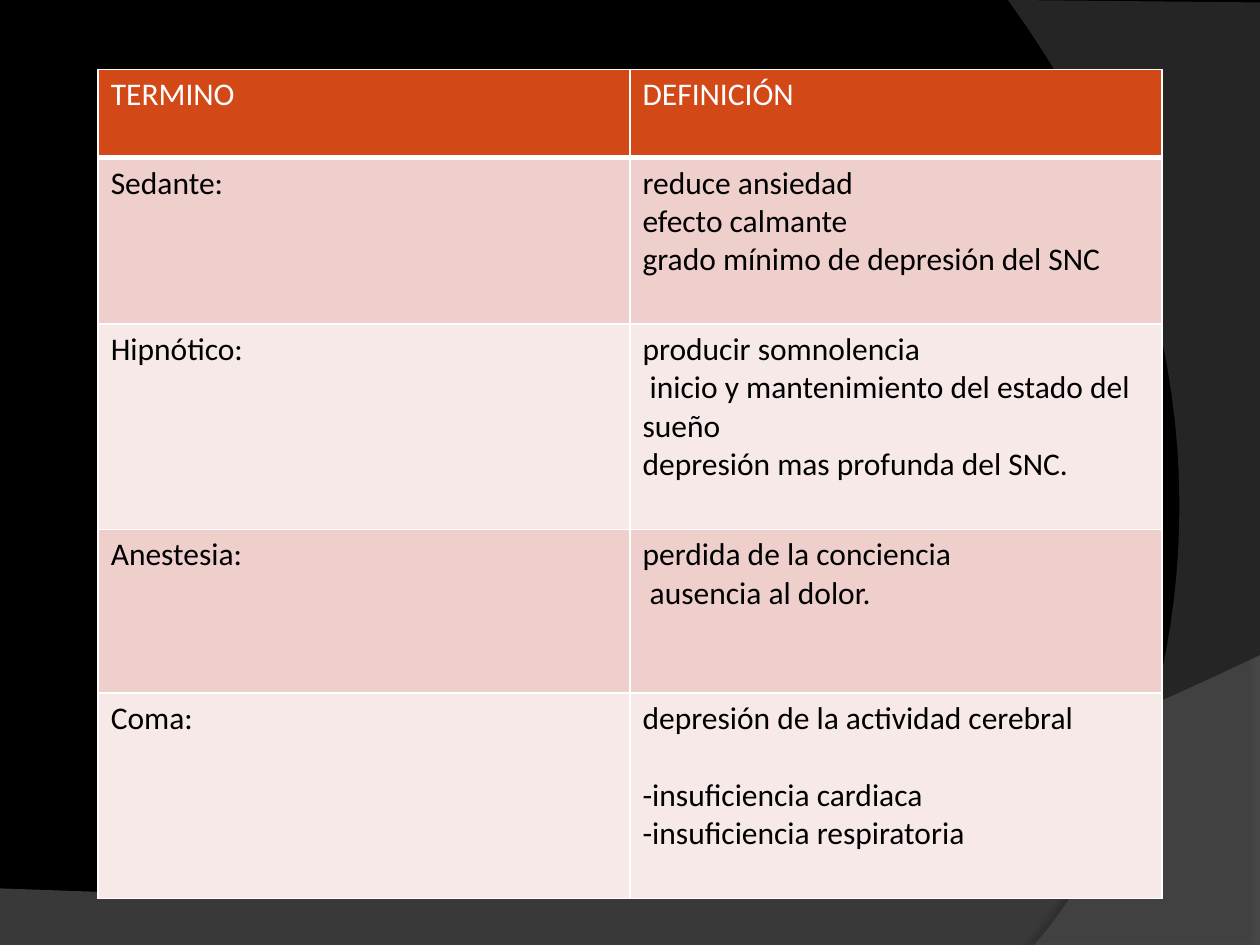
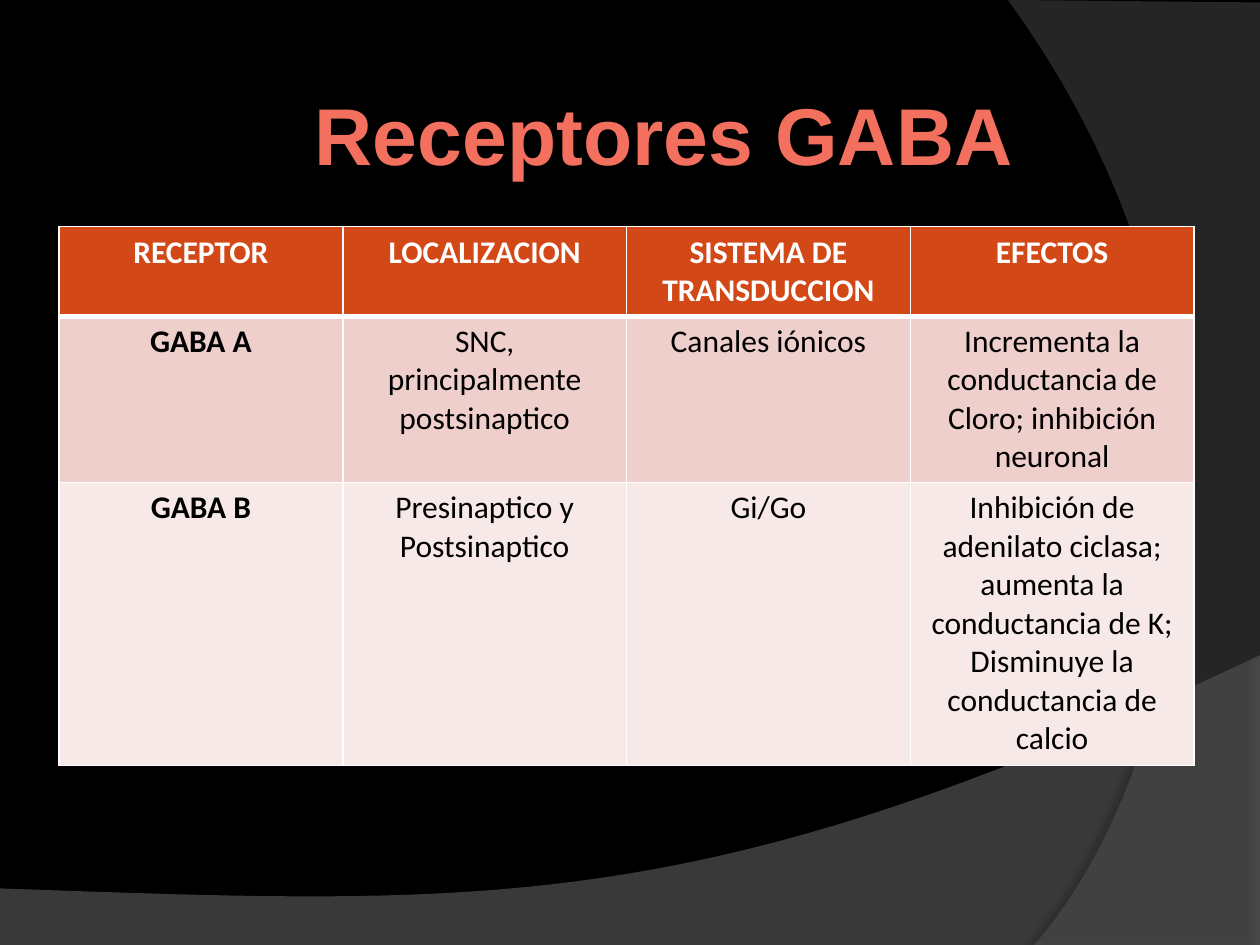
from lxml import etree
from pptx import Presentation
from pptx.dml.color import RGBColor
from pptx.enum.text import MSO_ANCHOR, MSO_AUTO_SIZE, PP_ALIGN
from pptx.oxml.ns import qn
from pptx.util import Cm, Pt

LEFT, CENTER = PP_ALIGN.LEFT, PP_ALIGN.CENTER
MIDDLE = MSO_ANCHOR.MIDDLE
NO_AUTOFIT = MSO_AUTO_SIZE.NONE
TITLE_ONLY, BLANK = 5, 6
COLORS = {
    "background": "000000",
    "band": "7F7F7F",
    "side": "5E5E5E",
    "title": "F4705E",
    "header": "D34817",
    "odd_row": "EFCFCC",
    "even_row": "F7E9E8",
    "border": "FFFFFF",
    "header_text": "FFFFFF",
    "body_text": "000000",
    "shadow": "000000",
}
TERMS = [
    ["TERMINO", "DEFINICIÓN"],
    ["Sedante:", "reduce ansiedad\nefecto calmante\ngrado mínimo de depresión del SNC"],
    ["Hipnótico:", "producir somnolencia\n inicio y mantenimiento del estado del sueño\n"
                   "depresión mas profunda del SNC."],
    ["Anestesia:", "perdida de la conciencia\n ausencia al dolor."],
    ["Coma:", "depresión de la actividad cerebral\n-insuficiencia cardiaca\n"
              "-insuficiencia respiratoria"],
]
RECEPTORS = [
    ["RECEPTOR", "LOCALIZACION", "SISTEMA DE TRANSDUCCION", "EFECTOS"],
    ["GABA A", "SNC, principalmente postsinaptico", "Canales iónicos",
     "Incrementa la conductancia de Cloro; inhibición neuronal"],
    ["GABA B", "Presinaptico y Postsinaptico", "Gi/Go",
     "Inhibición de adenilato ciclasa; aumenta la conductancia de K;\n"
     "Disminuye la conductancia de calcio"],
]


def curve(start, first, second, end, steps=40):
    """Return the points of a cubic Bézier curve."""
    points = []
    for step in range(steps + 1):
        t = step / steps
        weights = ((1 - t) ** 3, 3 * t * (1 - t) ** 2, 3 * t ** 2 * (1 - t), t ** 3)
        points.append(tuple(
            sum(weight * value for weight, value in zip(weights, values))
            for values in zip(start, first, second, end)))
    return points


class Deck:
    """Hold the shared style and the slide being built."""

    def __init__(self):
        self.presentation = Presentation()
        self.presentation.slide_width = Cm(25.4)
        self.presentation.slide_height = Cm(19.05)
        self.slide = None

    def color(self, name):
        return RGBColor.from_string(COLORS[name])

    def new_slide(self, layout):
        self.slide = self.presentation.slides.add_slide(
            self.presentation.slide_layouts[layout])
        fill = self.slide.background.fill
        fill.solid()
        fill.fore_color.rgb = self.color("background")
        band = curve((25.4, 13.21), (14.2, 18.52), (9.93, 18.26), (0, 17.91))
        self.backdrop([(0, 19.05), (25.4, 19.05)] + band, "band", 45, 35, 3.5, 270)
        side = curve((20.85, 19.05), (23.75, 15.72), (25.86, 7.62), (20.32, 0))
        self.backdrop([(25.4, 0.05), (25.4, 19.05)] + side, "side", 40, 45, 4, 180)

    def backdrop(self, points, color, opacity, shadow_opacity, distance, direction):
        vertices = [(Cm(x), Cm(y)) for x, y in points]
        builder = self.slide.shapes.build_freeform(*vertices[0])
        builder.add_line_segments(vertices[1:], close=True)
        shape = builder.convert_to_shape()
        shape.fill.solid()
        shape.fill.fore_color.rgb = self.color(color)
        shape.line.fill.background()
        shape.shadow.inherit = False
        properties = shape._element.spPr
        fill_color = properties.find(qn("a:solidFill"))[0]
        etree.SubElement(fill_color, qn("a:alpha"), val=str(opacity * 1000))
        shadow = etree.SubElement(
            properties.find(qn("a:effectLst")), qn("a:outerShdw"), blurRad=str(Pt(4)),
            dist=str(Pt(distance)), dir=str(direction * 60000), rotWithShape="0")
        shadow_color = etree.SubElement(shadow, qn("a:srgbClr"), val=COLORS["shadow"])
        etree.SubElement(shadow_color, qn("a:alpha"), val=str(shadow_opacity * 1000))

    def title(self, text):
        shape = self.slide.shapes.title
        self.slide.shapes._spTree.append(shape._element)
        shape.left, shape.top = Cm(1.27), Cm(0.74)
        shape.width, shape.height = Cm(22.86), Cm(3.89)
        frame = shape.text_frame
        frame.text = text
        frame.word_wrap = True
        frame.auto_size = NO_AUTOFIT
        frame.vertical_anchor = MIDDLE
        frame.margin_left = frame.margin_right = Cm(0.13)
        frame.margin_top = frame.margin_bottom = Cm(0.13)
        paragraph = frame.paragraphs[0]
        paragraph._p.get_or_add_pPr().set("marL", str(Cm(1.35)))
        paragraph._p.get_or_add_pPr().set("indent", "0")
        paragraph.alignment = CENTER
        self.format_font(paragraph.font, "Arial", 46, "title", True)

    def format_font(self, font, name, size, color, bold):
        font.name = name
        font.size = Pt(size)
        font.bold = bold
        font.color.rgb = self.color(color)

    def table(self, rows, left, top, column_width, row_heights, alignment, bold_headings):
        column_count = len(rows[0])
        table = self.slide.shapes.add_table(
            len(rows), column_count, Cm(left), Cm(top),
            Cm(column_width * column_count), Cm(sum(row_heights))).table
        for column in table.columns:
            column.width = Cm(column_width)
        for row_index, (texts, height) in enumerate(zip(rows, row_heights)):
            table.rows[row_index].height = Cm(height)
            is_header = row_index == 0
            row_fill = "header" if is_header else ("even_row", "odd_row")[row_index % 2]
            text_color = "header_text" if is_header else "body_text"
            for column_index, text in enumerate(texts):
                cell = table.cell(row_index, column_index)
                cell.text = text
                cell.fill.solid()
                cell.fill.fore_color.rgb = self.color(row_fill)
                self.borders(cell, 3 if is_header else 1)
                bold = bold_headings and (is_header or column_index == 0)
                for paragraph in cell.text_frame.paragraphs:
                    paragraph.alignment = alignment
                    self.format_font(paragraph.font, "Calibri", 18, text_color, bold)
        return table

    def borders(self, cell, bottom_width):
        properties = cell._tc.get_or_add_tcPr()
        widths = {"a:lnL": 1, "a:lnR": 1, "a:lnT": 1, "a:lnB": bottom_width}
        for position, (tag, width) in enumerate(widths.items()):
            line = etree.Element(qn(tag), w=str(Pt(width)))
            fill = etree.SubElement(line, qn("a:solidFill"))
            etree.SubElement(fill, qn("a:srgbClr"), val=COLORS["border"])
            properties.insert(position, line)


def main():
    deck = Deck()

    deck.new_slide(BLANK)
    terms = deck.table(TERMS, 1.98, 1.4, 10.72, [1.78, 3.35, 4.14, 3.3, 4.14], LEFT, False)
    terms.cell(4, 1).text_frame.paragraphs[1].space_before = Pt(22)

    deck.new_slide(TITLE_ONLY)
    deck.title("Receptores GABA")
    deck.table(RECEPTORS, 1.19, 4.57, 5.72, [1.8, 3.35, 5.7], CENTER, True)

    deck.presentation.save("out.pptx")


if __name__ == "__main__":
    main()
